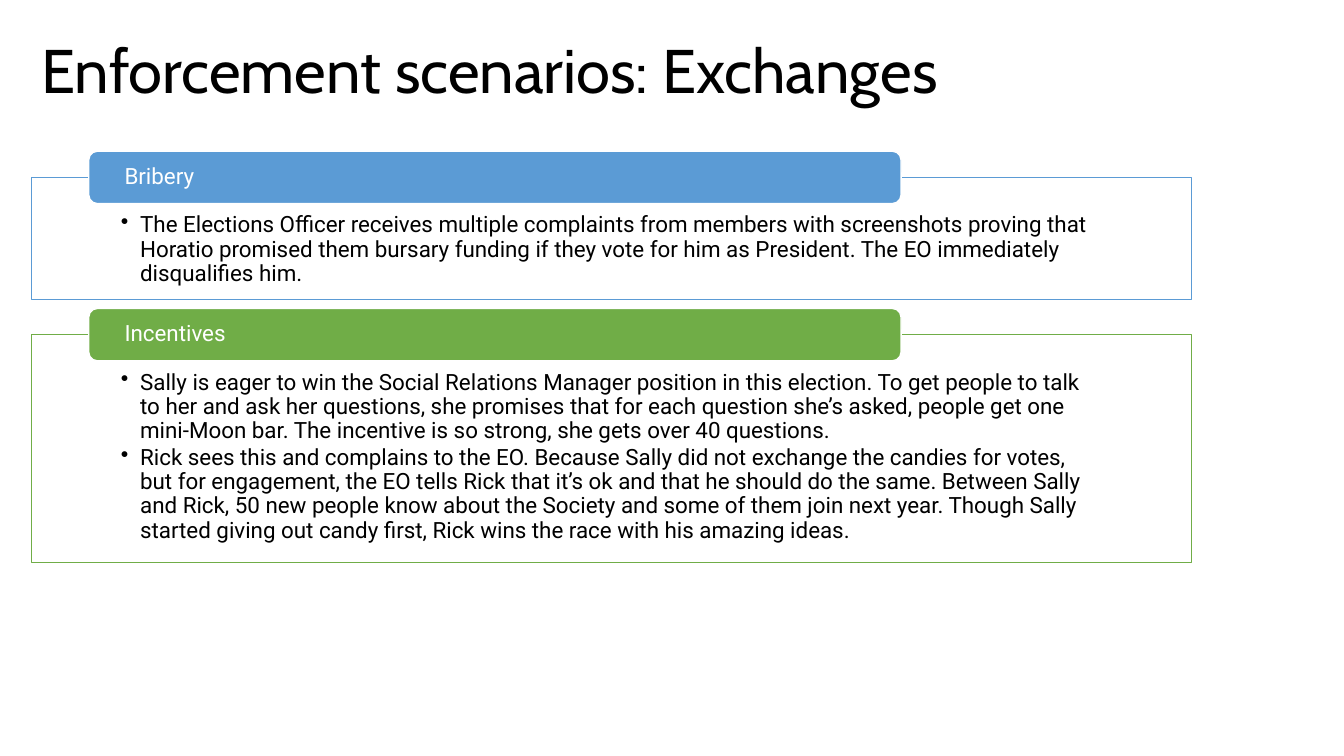
from lxml.etree import SubElement
from pptx import Presentation
from pptx.dml.color import RGBColor
from pptx.enum.shapes import MSO_SHAPE as SHAPE
from pptx.enum.text import MSO_ANCHOR as ANCHOR, PP_ALIGN as ALIGN
from pptx.oxml.ns import qn
from pptx.util import Inches, Pt

SECTIONS = [
    ("Bribery", "5B9BD5", 1.76, 1.21, [
        "The Elections Officer receives multiple complaints from members with "
        "screenshots proving that Horatio promised them bursary funding if they "
        "vote for him as President. The EO immediately disqualifies him.",
    ]),
    ("Incentives", "70AD47", 3.32, 2.26, [
        "Sally is eager to win the Social Relations Manager position in this "
        "election. To get people to talk to her and ask her questions, she "
        "promises that for each question she’s asked, people get one mini-Moon "
        "bar. The incentive is so strong, she gets over 40 questions.",
        "Rick sees this and complains to the EO. Because Sally did not exchange "
        "the candies for votes, but for engagement, the EO tells Rick that it’s "
        "ok and that he should do the same. Between Sally and Rick, 50 new people "
        "know about the Society and some of them join next year. Though Sally "
        "started giving out candy first, Rick wins the race with his amazing ideas.",
    ]),
]


def rgb(value):
    """Turn a hex string into a colour."""
    return RGBColor.from_string(value)


def add_bullet(p, indent):
    """Give a paragraph a round bullet with a hanging indent."""
    pPr = p._p.get_or_add_pPr()
    pPr.set("marL", str(Inches(indent)))
    pPr.set("indent", str(-Inches(indent)))
    SubElement(pPr, qn("a:buChar")).set("char", "•")


def write(tf, paragraphs, size=16, font="Roboto", color="000000",
          anchor=ANCHOR.TOP, insets=(0.1, 0.05, 0.1, 0.05), bullet=False, after=0):
    """Fill a text frame with formatted paragraphs."""
    tf.word_wrap = True
    tf.vertical_anchor = anchor
    (tf.margin_left, tf.margin_top,
     tf.margin_right, tf.margin_bottom) = map(Inches, insets)
    for i, text in enumerate(paragraphs):
        p = tf.add_paragraph() if i else tf.paragraphs[0]
        if bullet:
            p.level = 1
            add_bullet(p, 0.19)
        p.alignment = ALIGN.LEFT
        p.line_spacing = 0.9
        p.space_before = Pt(0)
        p.space_after = Pt(after)
        r = p.add_run()
        r.text = text
        r.font.size = Pt(size)
        r.font.name = font
        r.font.color.rgb = rgb(color)


def add_box(s, kind, box, fill, line):
    """Draw a filled, outlined shape without shadow."""
    sp = s.shapes.add_shape(kind, *map(Inches, box))
    sp.shadow.inherit = False
    sp.fill.solid()
    sp.fill.fore_color.rgb = rgb(fill)
    sp.line.color.rgb = rgb(line)
    sp.line.width = Pt(1)
    return sp


def add_title(s, text, box):
    """Place and format the slide title."""
    sp = s.shapes.title
    sp.left, sp.top, sp.width, sp.height = map(Inches, box)
    write(sp.text_frame, [text], size=44, font="Cabin", anchor=ANCHOR.MIDDLE)


def add_section(s, heading, color, points, box):
    """Draw an outlined box of bullets with a heading tab on its top edge."""
    left, top, width, height = box
    body = add_box(s, SHAPE.RECTANGLE, box, "FFFFFF", color)
    write(body.text_frame, points, insets=(0.89, 0.36, 0.89, 0.12),
          bullet=True, after=2)
    tab = add_box(s, SHAPE.ROUNDED_RECTANGLE,
                  (left + 0.57, top - 0.26, 0.7 * width, 0.52), color, "FFFFFF")
    write(tab.text_frame, [heading], color="FFFFFF", anchor=ANCHOR.MIDDLE,
          insets=(0.33, 0, 0.33, 0))


def main():
    """Build and save the slide."""
    prs = Presentation()
    prs.slide_width, prs.slide_height = Inches(13.33), Inches(7.5)
    s = prs.slides.add_slide(prs.slide_layouts[5])
    add_title(s, "Enforcement scenarios: Exchanges", (0.31, 0, 10.9, 1.45))
    for heading, color, top, height, points in SECTIONS:
        add_section(s, heading, color, points, (0.31, top, 11.51, height))
    prs.save("out.pptx")


if __name__ == "__main__":
    main()
